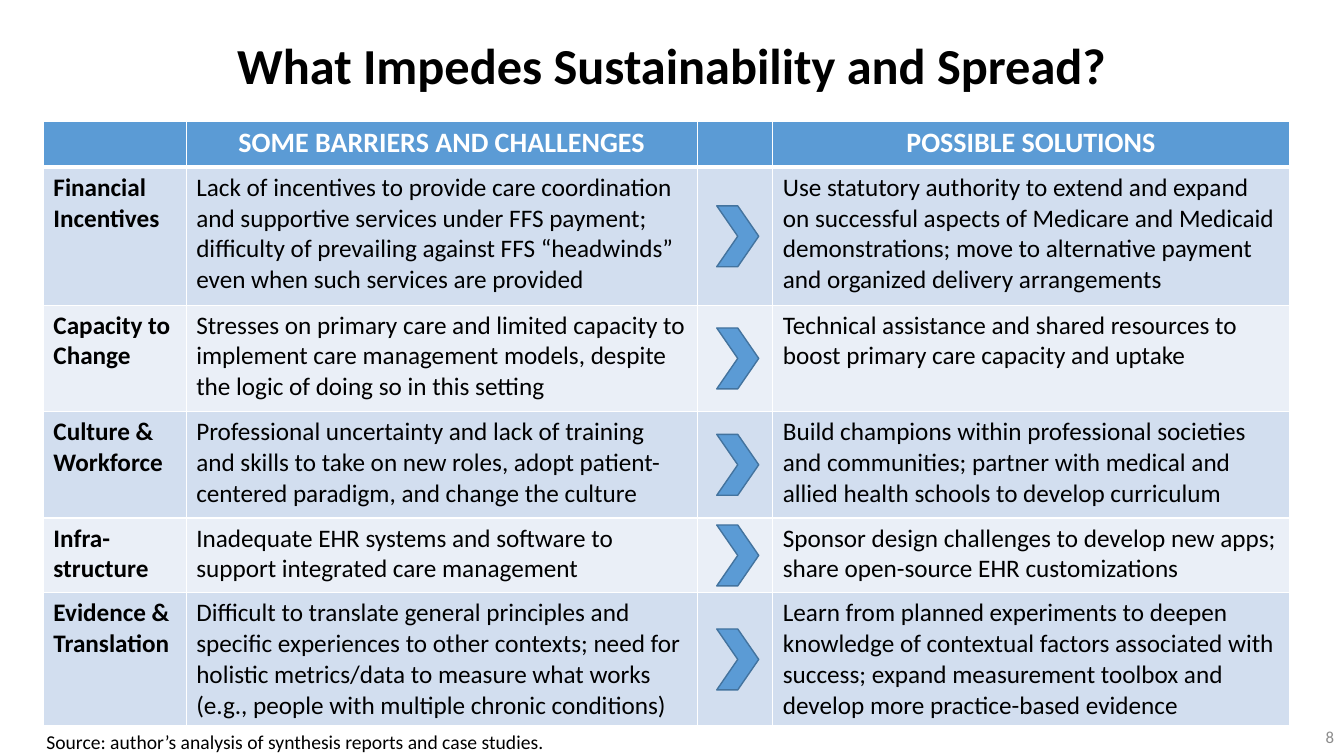
import pptx
import pptx.util
import pptx.dml.color
import pptx.enum.shapes
import pptx.enum.text
import pptx.oxml
import pptx.oxml.ns

Pt = pptx.util.Pt
ALIGN = pptx.enum.text.PP_ALIGN
MID = pptx.enum.text.MSO_ANCHOR.MIDDLE
HUES = {"head": "5B9BD5", "odd": "D2DEEF", "even": "EAEFF7", "edge": "43739E",
        "white": "FFFFFF", "black": "000000", "gray": "8C8C8C"}

COLS = [102, 365, 54, 369]
ROWS = [33, 98.5, 76, 76, 53.5, 95]
HEADS = ["", "SOME BARRIERS AND CHALLENGES", "", "POSSIBLE SOLUTIONS"]
BODY = [
    ["Financial Incentives",
     "Lack of incentives to provide care coordination and supportive services under FFS "
     "payment; difficulty of prevailing against FFS “headwinds” even when such services "
     "are provided", "",
     "Use statutory authority to extend and expand on successful aspects of Medicare and "
     "Medicaid demonstrations; move to alternative payment and organized delivery "
     "arrangements"],
    ["Capacity to Change",
     "Stresses on primary care and limited capacity to implement care management models, "
     "despite the logic of doing so in this setting", "",
     "Technical assistance and shared resources to boost primary care capacity and uptake"],
    ["Culture & Workforce",
     "Professional uncertainty and lack of training and skills to take on new roles, adopt "
     "patient- centered paradigm, and change the culture", "",
     "Build champions within professional societies and communities; partner with medical "
     "and allied health schools to develop curriculum"],
    ["Infra-structure",
     "Inadequate EHR systems and software to support integrated care management", "",
     "Sponsor design challenges to develop new apps; share open-source EHR customizations"],
    ["Evidence & Translation",
     "Difficult to translate general principles and specific experiences to other contexts; "
     "need for holistic metrics/data to measure what works (e.g., people with multiple "
     "chronic conditions)", "",
     "Learn from planned experiments to deepen knowledge of contextual factors associated "
     "with success; expand measurement toolbox and develop more practice-based evidence"],
]


def tint(name):
    return pptx.dml.color.RGBColor.from_string(HUES[name])


def write(frame, text, hue, align=ALIGN.LEFT, **form):
    para = frame.paragraphs[0]
    para.alignment = align
    run = para.add_run()
    run.text = text
    run.font.color.rgb = tint(hue)
    for key, value in {"name": "Calibri", **form}.items():
        setattr(run.font, key, value)
    return para


def label(slide, box, text, hue, wrap=True, anchor=MID, **form):
    frame = slide.shapes.add_textbox(*map(Pt, box)).text_frame
    for key, value in {"word_wrap": wrap, "vertical_anchor": anchor}.items():
        setattr(frame, key, value)
    return write(frame, text, hue, **form)


def rule(cell, widths):
    # Cell borders go ahead of the fill
    props = cell._tc.get_or_add_tcPr()
    for spot, (side, width) in enumerate(widths.items()):
        props.insert(spot, pptx.oxml.parse_xml(
            f'<a:ln{side} {pptx.oxml.ns.nsdecls("a")} w="{Pt(width)}"><a:solidFill>'
            f'<a:srgbClr val="{HUES["white"]}"/></a:solidFill></a:ln{side}>'))


def grid(slide, left, top):
    shape = slide.shapes.add_table(len(ROWS), len(COLS), Pt(left), Pt(top),
                                   Pt(sum(COLS)), Pt(sum(ROWS)))
    table = shape.table
    for col, width in zip(table.columns, COLS):
        col.width = Pt(width)
    for row, high in zip(table.rows, ROWS):
        row.height = Pt(high)
    for r, texts in enumerate([HEADS] + BODY):
        for c, text in enumerate(texts):
            cell = table.cell(r, c)
            cell.fill.solid()
            cell.fill.fore_color.rgb = tint("head" if r == 0 else "odd" if r % 2 else "even")
            rule(cell, {"L": 1, "R": 1, "T": 3 if r == 1 else 1, "B": 3 if r == 0 else 1})
            if not text:
                continue
            if r == 0:
                write(cell.text_frame, text, "white", ALIGN.CENTER, size=Pt(20), bold=True)
            else:
                write(cell.text_frame, text, "black", size=Pt(18), bold=c == 0)


def arrows(slide, left, top, wide=30, high=43.5):
    # One chevron centred in each body row
    for r in range(1, len(ROWS)):
        mid = top + sum(ROWS[:r]) + ROWS[r] / 2
        mark = slide.shapes.add_shape(pptx.enum.shapes.MSO_SHAPE.CHEVRON, Pt(left),
                                      Pt(mid - high / 2), Pt(wide), Pt(high))
        mark.shadow.inherit = False
        mark.fill.solid()
        mark.fill.fore_color.rgb = tint("head")
        mark.line.color.rgb = tint("edge")
        mark.line.width = Pt(1)


def build(slide, left, top):
    # Title
    title = label(slide, (66, 27, 828, 43.5), "What Impedes Sustainability and Spread?",
                  "black", align=ALIGN.CENTER, size=Pt(36), bold=True)
    title.line_spacing = 0.9
    # Table and arrows
    grid(slide, left, top)
    arrows(slide, left + sum(COLS[:2]) + 14, top)
    # Page number and source line
    label(slide, (744, 511.5, 216, 29), "8", "gray", align=ALIGN.RIGHT, size=Pt(12))
    label(slide, (26, 518, 370, 24),
          "Source: author’s analysis of synthesis reports and case studies.", "black",
          wrap=False, anchor=pptx.enum.text.MSO_ANCHOR.TOP, size=Pt(14))


def main():
    deck = pptx.Presentation()
    deck.slide_width, deck.slide_height = Pt(960), Pt(540)
    build(deck.slides.add_slide(deck.slide_layouts[6]), 31, 86.5)
    deck.save("out.pptx")


if __name__ == "__main__":
    main()
